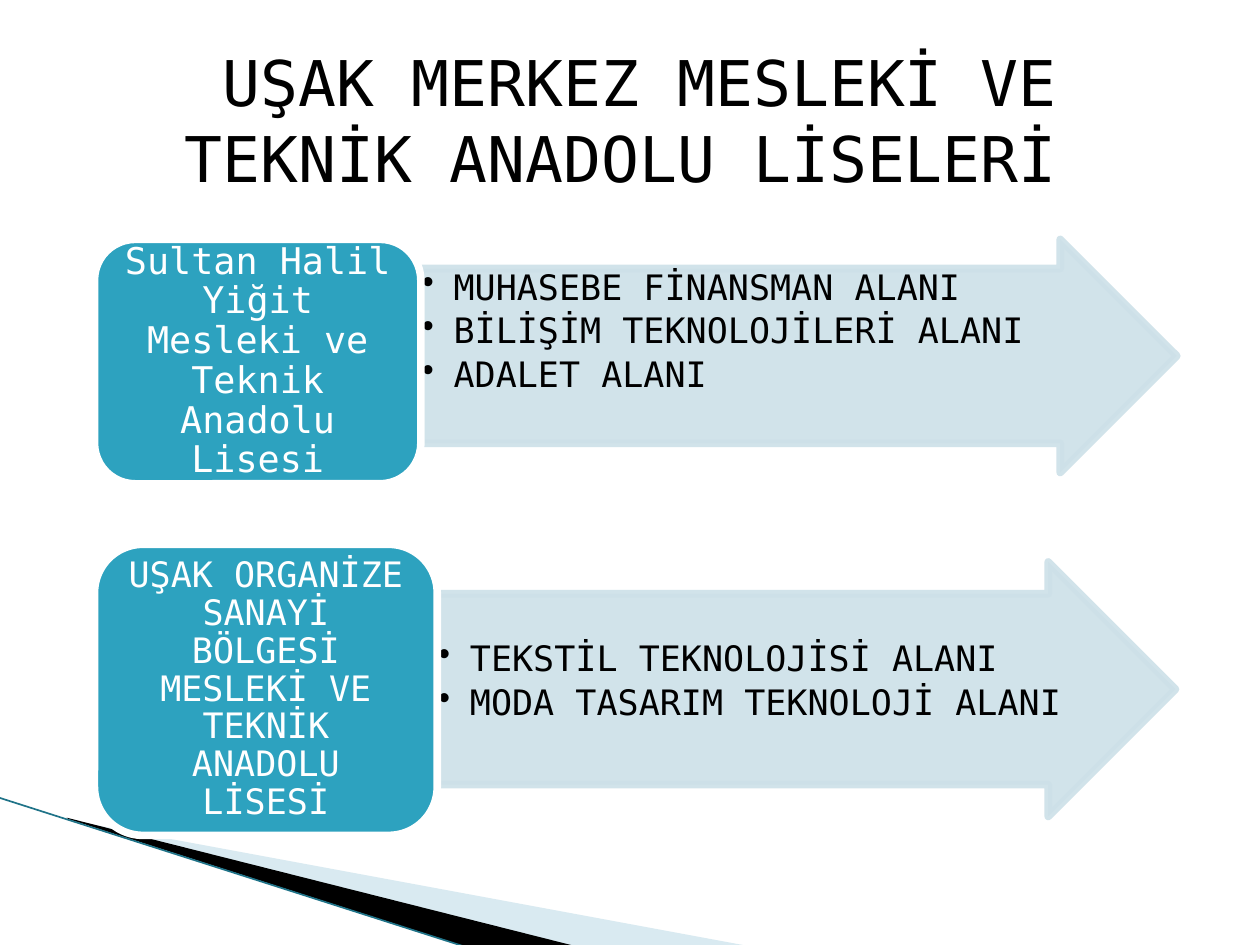
import pptx
import pptx.util
import pptx.dml.color
import pptx.enum.shapes
import pptx.enum.text
import pptx.oxml.ns
from lxml import etree
from pptx.util import Inches

COLORS = {
    "text": "000000",
    "label_text": "FFFFFF",
    "label": "2DA2BF",
    "outline": "FFFFFF",
    "arrow": "CDE0E8",
    "wedge_light": "A0CBDC",
    "wedge_dark": "000000",
    "edge": "1F7388",
}
FONT = "DejaVu Sans Mono"
SHAPES = pptx.enum.shapes.MSO_SHAPE
ALIGN = pptx.enum.text.PP_ALIGN
ANCHOR = pptx.enum.text.MSO_ANCHOR


def rgb(name):
    """Return the named colour."""
    return pptx.dml.color.RGBColor.from_string(COLORS[name])


def set_alpha(shape, percent):
    """Make the fill and outline of a shape partly transparent."""
    for color in shape._element.spPr.iter(pptx.oxml.ns.qn("a:srgbClr")):
        alpha = etree.SubElement(color, pptx.oxml.ns.qn("a:alpha"))
        alpha.set("val", str(percent * 1000))


def paint(shape, fill, line=None, alpha=100):
    """Set the fill, outline and opacity of a shape."""
    shape.shadow.inherit = False
    shape.fill.solid()
    shape.fill.fore_color.rgb = rgb(fill)
    if line:
        shape.line.color.rgb = rgb(line)
        shape.line.width = pptx.util.Pt(4.33)
    else:
        shape.line.fill.background()
    if alpha < 100:
        set_alpha(shape, alpha)


def write_text(shape, text, size, color="text", align=ALIGN.LEFT, anchor=ANCHOR.TOP,
               margins=(0.1, 0.05, 0.1, 0.05), spacing=1.0, after=0, bullets=False):
    """Write one paragraph per line of text into a shape."""
    frame = shape.text_frame
    frame.word_wrap = True
    frame.vertical_anchor = anchor
    (frame.margin_left, frame.margin_top,
     frame.margin_right, frame.margin_bottom) = map(Inches, margins)
    for index, line in enumerate(text.split("\n")):
        paragraph = frame.add_paragraph() if index else frame.paragraphs[0]
        paragraph.text = line
        paragraph.alignment = align
        paragraph.line_spacing = spacing
        paragraph.space_after = pptx.util.Pt(after)
        if bullets:
            properties = paragraph._p.get_or_add_pPr()
            properties.set("marL", str(Inches(0.25)))
            properties.set("indent", str(-Inches(0.25)))
            bullet = etree.SubElement(properties, pptx.oxml.ns.qn("a:buChar"))
            bullet.set("char", "•")
        paragraph.font.size = pptx.util.Pt(size)
        paragraph.font.name = FONT
        paragraph.font.color.rgb = rgb(color)


def add_wedge(slide, points, fill, alpha=100):
    """Draw a filled outline through points given in inches."""
    corners = [(Inches(x), Inches(y)) for x, y in points]
    builder = slide.shapes.build_freeform(*corners[0], scale=1.0)
    builder.add_line_segments(corners[1:], close=True)
    paint(builder.convert_to_shape(), fill, alpha=alpha)


def add_corner(slide, left, top):
    """Draw the decoration of the lower left corner."""
    light = [(0.55, 0.18), (5.95, 1.18), (4.56, 1.18), (0.55, 0.17)]
    dark = [(0.53, 0.16), (4.57, 1.18), (3.72, 1.19), (0.54, 0.17)]
    for points, fill, alpha in ((light, "wedge_light", 40), (dark, "wedge_dark", 100)):
        add_wedge(slide, [(left + x, top + y) for x, y in points], fill, alpha)
    edge = slide.shapes.add_connector(
        pptx.enum.shapes.MSO_CONNECTOR.STRAIGHT,
        Inches(left - 0.01), Inches(top), Inches(left + 3.71), Inches(top + 1.19))
    edge.line.color.rgb = rgb("edge")
    edge.line.width = pptx.util.Pt(0.95)
    etree.SubElement(edge._element.spPr, pptx.oxml.ns.qn("a:effectLst"))


def add_title(slide, left, top, width, height, text):
    """Place the slide title."""
    box = slide.shapes.add_textbox(*map(Inches, (left, top, width, height)))
    write_text(box, text, 36, align=ALIGN.CENTER, anchor=ANCHOR.MIDDLE)


def add_school(slide, left, top, width, height, school, fields, size,
               label_width, arrow_top, arrow_height, text_top):
    """Place a school label and the arrow that lists its fields."""
    arrow = slide.shapes.add_shape(
        SHAPES.RIGHT_ARROW, Inches(left + label_width), Inches(top + arrow_top),
        Inches(width - label_width), Inches(arrow_height))
    arrow.adjustments[0] = 0.75
    arrow.adjustments[1] = 0.5
    paint(arrow, "arrow", "arrow", alpha=90)
    write_text(arrow, fields, 20, margins=(0.01, text_top, 0.01, 0.01),
               spacing=0.9, after=3.5, bullets=True)
    label = slide.shapes.add_shape(
        SHAPES.ROUNDED_RECTANGLE, Inches(left), Inches(top),
        Inches(label_width), Inches(height))
    paint(label, "label", "outline")
    write_text(label, school, size, color="label_text", align=ALIGN.CENTER,
               anchor=ANCHOR.MIDDLE, margins=(0.09, 0.04, 0.09, 0.04), spacing=0.9)


def main():
    """Build and save the presentation."""
    presentation = pptx.Presentation()
    presentation.slide_width = Inches(10)
    presentation.slide_height = Inches(7.5)
    slide = presentation.slides.add_slide(presentation.slide_layouts[6])
    add_corner(slide, 0, 6.33)
    add_school(
        slide, 0.75, 1.9, 8.59, 1.94,
        "Sultan Halil Yiğit Mesleki ve Teknik Anadolu Lisesi",
        "MUHASEBE FİNANSMAN ALANI\nBİLİŞİM TEKNOLOJİLERİ ALANI\nADALET ALANI",
        21, label_width=2.59, arrow_top=0, arrow_height=1.85, text_top=0.01)
    add_school(
        slide, 0.75, 4.32, 8.58, 2.31,
        "UŞAK ORGANİZE SANAYİ BÖLGESİ MESLEKİ VE TEKNİK ANADOLU LİSESİ",
        "TEKSTİL TEKNOLOJİSİ ALANI\nMODA TASARIM TEKNOLOJİ ALANI",
        20, label_width=2.72, arrow_top=0.14, arrow_height=2.02, text_top=0.38)
    add_title(slide, 0.75, 0.29, 8.35, 1.31,
              " UŞAK MERKEZ MESLEKİ VE TEKNİK ANADOLU LİSELERİ")
    presentation.save("out.pptx")


if __name__ == "__main__":
    main()
